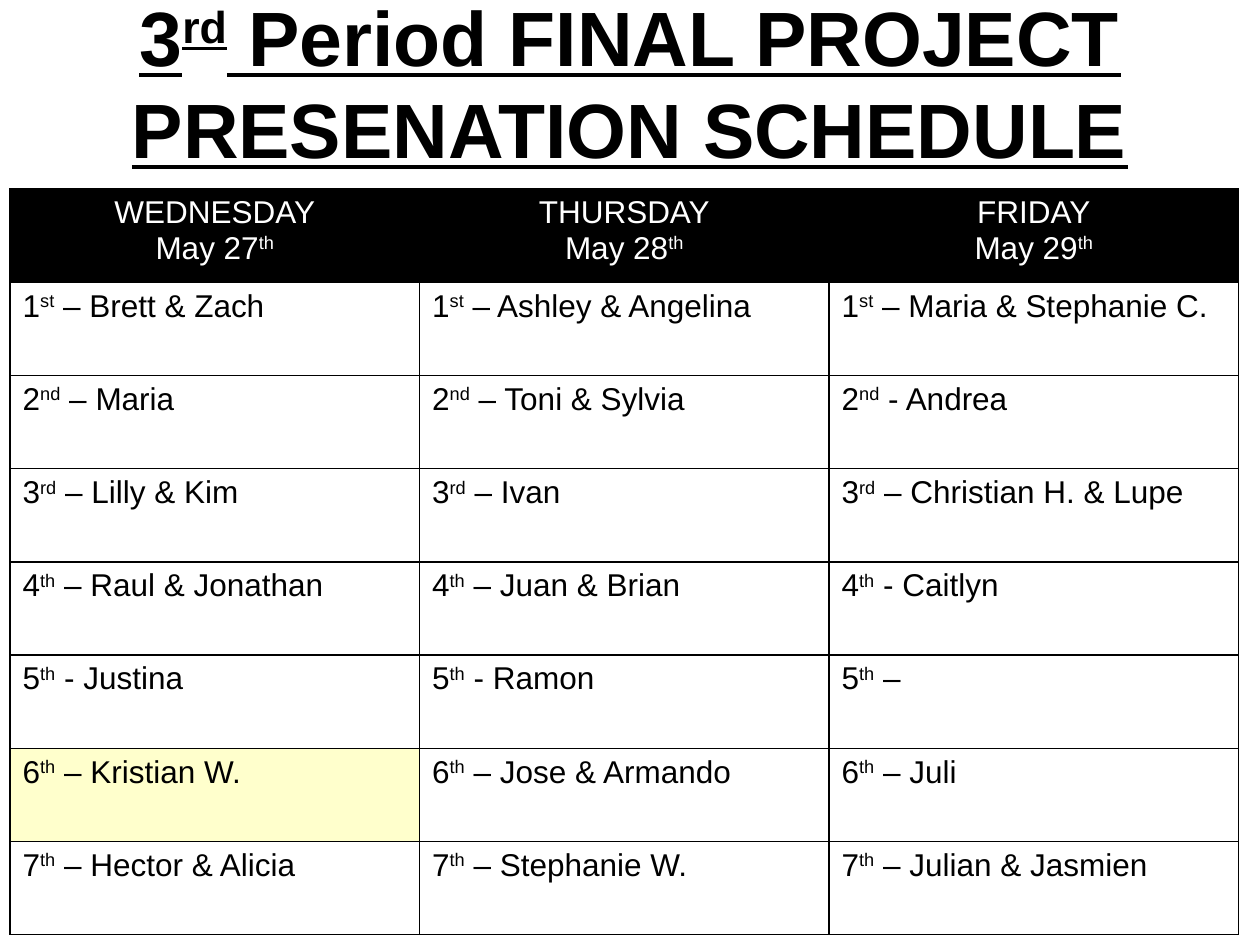
from lxml import etree
from pptx import Presentation
from pptx.dml.color import RGBColor
from pptx.enum.text import MSO_ANCHOR, MSO_AUTO_SIZE, PP_ALIGN
from pptx.oxml.ns import qn
from pptx.util import Pt

LEFT, CENTER = PP_ALIGN.LEFT, PP_ALIGN.CENTER
MIDDLE = MSO_ANCHOR.MIDDLE
NO_FIT = MSO_AUTO_SIZE.NONE
SCALE = 9144
BLACK, WHITE, CREAM = "000000", "FFFFFF", "FFFFCC"

TITLE = ["3^rd^ Period FINAL PROJECT", "PRESENATION SCHEDULE"]
DAYS = [("WEDNESDAY", 27), ("THURSDAY", 28), ("FRIDAY", 29)]
ENDS = ["st", "nd", "rd", "th", "th", "th", "th"]
TEAMS = [
    ["– Brett & Zach", "– Ashley & Angelina", "– Maria & Stephanie C."],
    ["– Maria", "– Toni & Sylvia", "- Andrea"],
    ["– Lilly & Kim", "– Ivan", "– Christian H. & Lupe"],
    ["– Raul & Jonathan", "– Juan & Brian", "- Caitlyn"],
    ["- Justina", "- Ramon", "–"],
    ["– Kristian W.", "– Jose & Armando", "– Juli"],
    ["– Hector & Alicia", "– Stephanie W.", "– Julian & Jasmien"],
]
MARKED = (6, 0)


def px(count):
    return count * SCALE


def color(code):
    return RGBColor.from_string(code)


class Deck:
    face = "Arial"
    head = {"size": Pt(44), "bold": True, "underline": True}
    body = {"size": Pt(18), "bold": False}

    def __init__(self, wide, high):
        self.file = Presentation()
        self.file.slide_width, self.file.slide_height = px(wide), px(high)
        self.slide = self.file.slides.add_slide(self.file.slide_layouts[5])

    def text(self, frame, lines, style, ink, align):
        for index, line in enumerate(lines):
            para = frame.paragraphs[0] if index == 0 else frame.add_paragraph()
            para.alignment = align
            for turn, part in enumerate(line.split("^")):
                run = para.add_run()
                run.text = part
                for name, value in {"name": self.face, **style}.items():
                    setattr(run.font, name, value)
                run.font.color.rgb = color(ink)
                if turn % 2:
                    run.font._element.set("baseline", "30000")

    def title(self, box, lines):
        shape = self.slide.shapes.title
        for name, value in zip(("left", "top", "width", "height"), box):
            setattr(shape, name, px(value))
        frame = shape.text_frame
        form = {"word_wrap": True, "auto_size": NO_FIT, "vertical_anchor": MIDDLE}
        for name, value in form.items():
            setattr(frame, name, value)
        self.text(frame, lines, self.head, BLACK, CENTER)

    def border(self, cell):
        props = cell._tc.get_or_add_tcPr()
        for side in ("lnL", "lnR", "lnT", "lnB"):
            line = etree.SubElement(props, qn(f"a:{side}"), w=str(Pt(1)))
            fill = etree.SubElement(line, qn("a:solidFill"))
            etree.SubElement(fill, qn("a:srgbClr"), val=BLACK)

    def cell(self, cell, lines, fill, ink, align):
        self.border(cell)
        if fill:
            cell.fill.solid()
            cell.fill.fore_color.rgb = color(fill)
        else:
            cell.fill.background()
        self.text(cell.text_frame, lines, self.body, ink, align)

    def table(self, box, rows):
        shape = self.slide.shapes.add_table(len(rows), len(rows[0]), *map(px, box))
        grid = shape.table
        grid.horz_banding = grid.first_row = False
        for y, row in enumerate(rows):
            for x, lines in enumerate(row):
                if y == 0:
                    look = BLACK, WHITE, CENTER
                else:
                    look = CREAM if (y, x) == MARKED else None, BLACK, LEFT
                self.cell(grid.cell(y, x), lines, *look)


def main():
    deck = Deck(1000, 750)
    deck.title((0, 30, 1000, 70), TITLE)
    rows = [[[day, f"May {date}^th"] for day, date in DAYS]]
    for place, (end, teams) in enumerate(zip(ENDS, TEAMS), 1):
        rows.append([[f"{place}^{end}^ {team}"] for team in teams])
    deck.table((8, 150, 975, 592), rows)
    deck.file.save("out.pptx")


if __name__ == "__main__":
    main()
